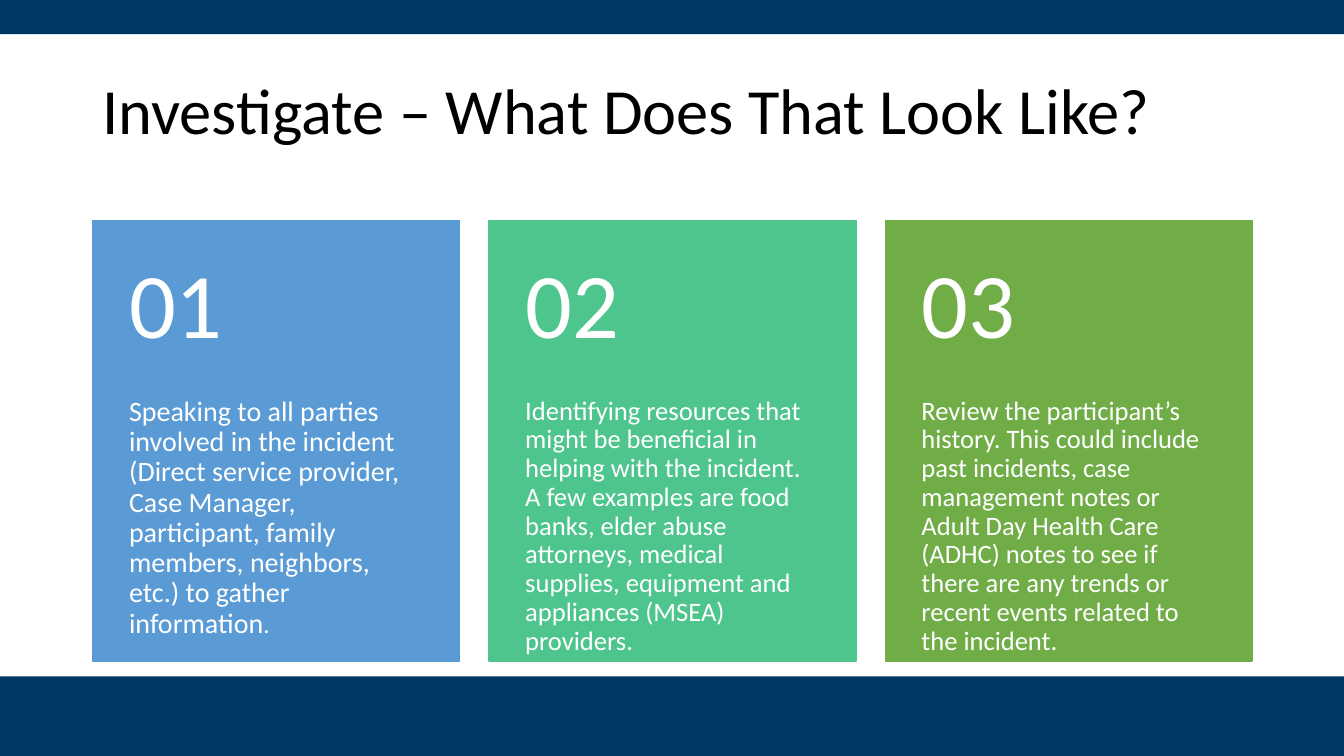
from pptx import Presentation
from pptx.dml.color import RGBColor
from pptx.enum.shapes import MSO_SHAPE
from pptx.enum.text import MSO_ANCHOR
from pptx.util import Inches, Pt

NAVY = RGBColor(0x00, 0x38, 0x65)
BLUE = RGBColor(0x5B, 0x9B, 0xD5)
MINT = RGBColor(0x4D, 0xC5, 0x8D)
GREEN = RGBColor(0x70, 0xAD, 0x47)
BLACK = RGBColor(0x00, 0x00, 0x00)
WHITE = RGBColor(0xFF, 0xFF, 0xFF)

TITLE = "Investigate – What Does That Look Like?"
CARDS = [
    (BLUE, [("Speaking to all parties involved in the incident (Direct service provider, "
             "Case Manager, participant, family members, neighbors, etc.) to gather "
             "information", 20), (".", 18)]),
    (MINT, [("Identifying resources that might be beneficial in helping with the incident. "
             "A few examples are food banks, elder abuse attorneys, medical supplies, "
             "equipment and appliances (MSEA) providers.", 19)]),
    (GREEN, [("Review the participant’s history. This could include past incidents, case "
              "management notes or Adult Day Health Care (ADHC) notes to see if there are "
              "any trends or recent events related to the incident.", 19)]),
]
BANDS = [(0, 0.34), (6.71, 0.79)]

SLIDE_WIDTH, SLIDE_HEIGHT = 13.33, 7.5
CARD_LEFT, CARD_TOP, CARD_WIDTH, CARD_HEIGHT = 0.92, 2.19, 3.64, 4.37
CARD_STEP = 3.93
NUMBER_HEIGHT = 1.75


def add_block(slide, left, top, width, height, color):
    shape = slide.shapes.add_shape(
        MSO_SHAPE.RECTANGLE, Inches(left), Inches(top), Inches(width), Inches(height))
    shape.shadow.inherit = False
    shape.fill.solid()
    shape.fill.fore_color.rgb = color
    shape.line.color.rgb = color
    shape.line.width = Pt(1)
    return shape


def add_text(slide, box, runs, color, anchor, insets):
    shape = slide.shapes.add_textbox(*[Inches(length) for length in box])
    frame = shape.text_frame
    frame.word_wrap = True
    frame.vertical_anchor = anchor
    frame.margin_left, frame.margin_top, frame.margin_right, frame.margin_bottom = [
        Inches(inset) for inset in insets]
    paragraph = frame.paragraphs[0]
    paragraph.line_spacing = 0.9
    for text, size in runs:
        run = paragraph.add_run()
        run.text = text
        run.font.name = "Calibri"
        run.font.size = Pt(size)
        run.font.color.rgb = color


def main():
    presentation = Presentation()
    presentation.slide_width = Inches(SLIDE_WIDTH)
    presentation.slide_height = Inches(SLIDE_HEIGHT)
    slide = presentation.slides.add_slide(presentation.slide_layouts[6])

    for top, height in BANDS:
        band = add_block(slide, 0, top, SLIDE_WIDTH, height, NAVY)
        band.line.fill.background()

    add_text(slide, (CARD_LEFT, 0.4, 11.5, 1.45), [(TITLE, 46)], BLACK,
             MSO_ANCHOR.MIDDLE, (0.1, 0.05, 0.1, 0.05))

    for index, (color, body) in enumerate(CARDS):
        left = CARD_LEFT + index * CARD_STEP
        add_block(slide, left, CARD_TOP, CARD_WIDTH, CARD_HEIGHT, color)
        add_text(slide,
                 (left, CARD_TOP + NUMBER_HEIGHT, CARD_WIDTH, CARD_HEIGHT - NUMBER_HEIGHT),
                 body, WHITE, MSO_ANCHOR.TOP, (0.36, 0, 0.36, 0.36))
        add_text(slide, (left, CARD_TOP, CARD_WIDTH, NUMBER_HEIGHT),
                 [(f"{index + 1:02d}", 66)], WHITE,
                 MSO_ANCHOR.MIDDLE, (0.36, 0.18, 0.36, 0.18))

    presentation.save("out.pptx")


if __name__ == "__main__":
    main()
